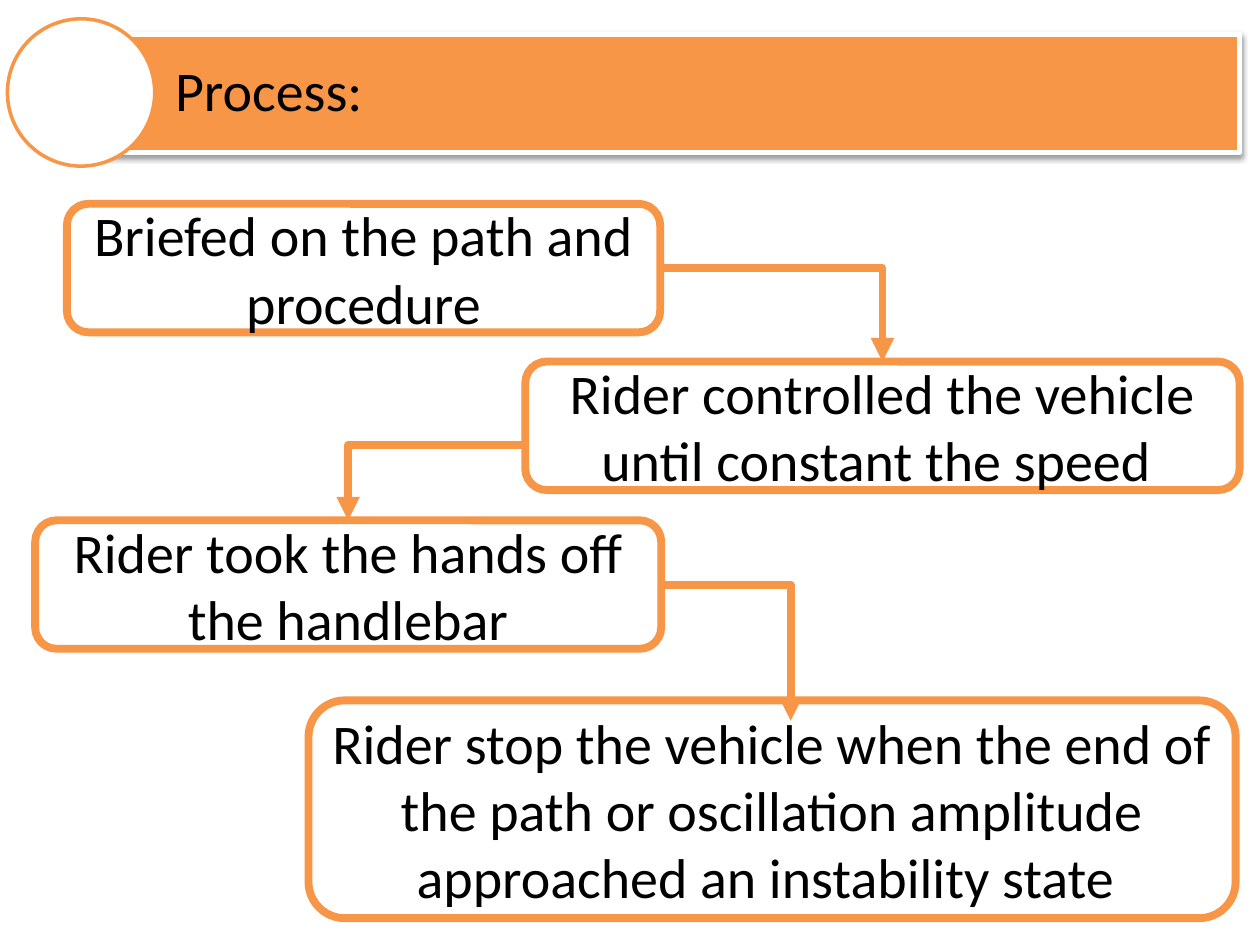
from collections import namedtuple

from lxml.etree import SubElement
from pptx import Presentation
from pptx.dml.color import RGBColor
from pptx.enum.shapes import MSO_CONNECTOR as Connector, MSO_SHAPE as Shape
from pptx.enum.text import MSO_ANCHOR as Anchor, PP_ALIGN as Align
from pptx.oxml.ns import qn
from pptx.util import Cm, Pt

Box = namedtuple("Box", "left top width height")

ORANGE, WHITE, BLACK = "F79646", "FFFFFF", "000000"


def paint(color_format, color):
    color_format.rgb = RGBColor.from_string(color)


def write(frame, text, size=32, color=BLACK, align=Align.CENTER, spacing=1.0, indent=0.25):
    frame.word_wrap = True
    frame.vertical_anchor = Anchor.MIDDLE
    frame.margin_left = Cm(indent)
    paragraph = frame.paragraphs[0]
    paragraph.alignment = align
    paragraph.line_spacing = spacing
    run = paragraph.add_run()
    run.text = text
    run.font.name = "Calibri"
    run.font.size = Pt(size)
    paint(run.font.color, color)


def outlined(slide, kind, box, fill, line, weight):
    shape = slide.shapes.add_shape(kind, *map(Cm, box))
    shape.shadow.inherit = False
    shape.fill.solid()
    paint(shape.fill.fore_color, fill)
    paint(shape.line.color, line)
    shape.line.width = Pt(weight)
    return shape


def drop_shadow(shape):
    effects = shape._element.spPr.find(qn("a:effectLst"))
    shadow = SubElement(effects, qn("a:outerShdw"), blurRad=str(Pt(3.1)),
                        dist=str(Pt(1.6)), dir="5400000", rotWithShape="0")
    tint = SubElement(shadow, qn("a:srgbClr"), val=BLACK)
    SubElement(tint, qn("a:alpha"), val="38000")


def add_header(slide, box, title):
    inset = 1.5
    diameter = box.height - 0.02
    banner_box = Box(box.left + inset, box.top + 0.31, box.width - inset, 2.39)
    banner = outlined(slide, Shape.RECTANGLE, banner_box, ORANGE, WHITE, 3)
    drop_shadow(banner)
    write(banner.text_frame, title, align=Align.LEFT, spacing=0.9, indent=1.88)
    badge_box = Box(box.left, box.top, diameter, diameter)
    outlined(slide, Shape.OVAL, badge_box, WHITE, ORANGE, 2)


def add_step(slide, box, text):
    step = outlined(slide, Shape.ROUNDED_RECTANGLE, box, WHITE, ORANGE, 4.5)
    write(step.text_frame, text)


def add_link(slide, source, target, exit_at=0.5, enter_at=0.5, overlap=0):
    rightward = target.left > source.left
    start_x = source.left + source.width * rightward
    start_y = source.top + source.height * exit_at
    end_x = target.left + target.width * enter_at
    end_y = target.top + overlap
    link = slide.shapes.add_connector(Connector.ELBOW, *map(Cm, (start_x, start_y, end_x, end_y)))
    paint(link.line.color, ORANGE)
    link.line.width = Pt(4.5)
    properties = link._element.spPr
    properties.find(qn("a:prstGeom")).set("prst", "bentConnector2")
    SubElement(properties.find(qn("a:ln")), qn("a:tailEnd"), type="triangle")
    SubElement(properties, qn("a:effectLst"))


def add_process(slide, box):
    briefing, control, hands_off, stop = [
        Box(box.left + left, box.top + top, width, height)
        for left, top, width, height in (
            (0.64, 0, 11.96, 2.59),
            (9.88, 3.18, 14.4, 2.59),
            (0, 6.38, 12.62, 2.59),
            (5.51, 10.01, 18.69, 4.39),
        )
    ]
    add_step(slide, briefing, "Briefed on the path and procedure")
    add_step(slide, control, "Rider controlled the vehicle until constant the speed ")
    add_step(slide, hands_off, "Rider took the hands off the handlebar")
    add_step(slide, stop, "Rider stop the vehicle when the end of the path or "
                          "oscillation amplitude approached an instability state ")
    add_link(slide, briefing, control)
    add_link(slide, control, hands_off, exit_at=0.65)
    add_link(slide, hands_off, stop, enter_at=0.52, overlap=0.41)


def main():
    deck = Presentation()
    deck.slide_width, deck.slide_height = Cm(25.4), Cm(19.05)
    slide = deck.slides.add_slide(deck.slide_layouts[6])
    add_header(slide, Box(0.15, 0.38, 24.84, 2.99), "Process:")
    add_process(slide, Box(0.71, 4.11, 24.28, 14.4))
    deck.save("out.pptx")


if __name__ == "__main__":
    main()
